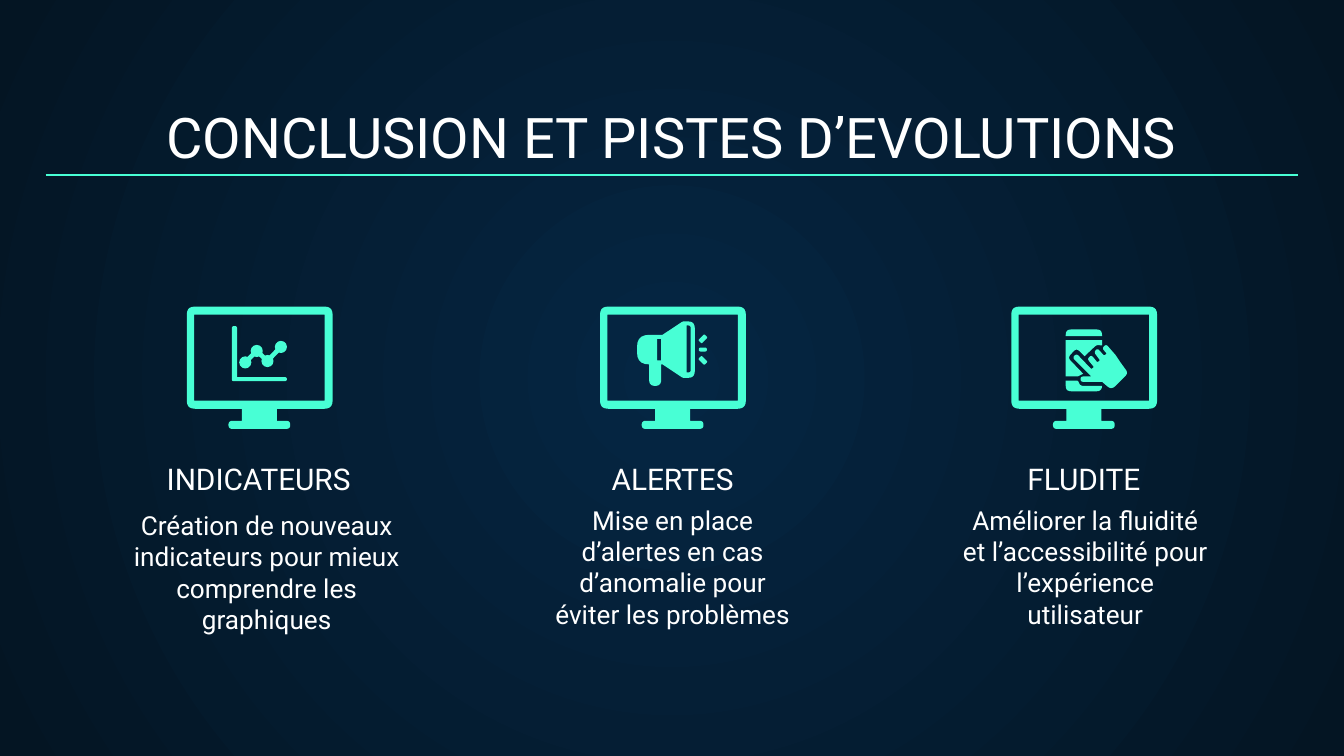
"""Build a dark conclusion slide with three icon columns."""
from lxml.etree import SubElement
from pptx import Presentation
from pptx.dml.color import RGBColor
from pptx.enum.shapes import MSO_CONNECTOR, MSO_SHAPE
from pptx.enum.text import MSO_ANCHOR, PP_ALIGN
from pptx.oxml.ns import qn
from pptx.util import Cm, Pt

rgb = RGBColor.from_string
MINT, WHITE = "48FFD5", "FFFFFF"
UNIT = 0.0254


def write(sp, box, text, size, anchor):
    """Place a shape, given in hundredths of an inch, and fill in its text."""
    sp.left, sp.top, sp.width, sp.height = [Cm(v * UNIT) for v in box]
    tf = sp.text_frame
    tf.word_wrap = True
    tf.vertical_anchor = anchor
    tf.margin_left = tf.margin_right = tf.margin_top = tf.margin_bottom = Cm(0.25)
    p = tf.paragraphs[0]
    p.alignment = PP_ALIGN.CENTER
    r = p.add_run()
    r.text = text
    r.font.name, r.font.size, r.font.bold = "Roboto", Pt(size), False
    r.font.color.rgb = rgb(WHITE)


def outline(contours, dx=0, dy=0):
    """Draw a mint shape from (x, y, corner radius) points; later contours are holes."""
    builder = None
    for corners in contours:
        pts = []
        for i, (x, y, *radius) in enumerate(corners):
            if not radius:
                pts.append((x, y))
                continue
            ends = []
            for nx, ny, *_ in (corners[i - 1], corners[(i + 1) % len(corners)]):
                k = radius[0] / ((nx - x) ** 2 + (ny - y) ** 2) ** 0.5
                ends.append((x + (nx - x) * k, y + (ny - y) * k))
            (ax, ay), (bx, by) = ends
            for t in (0, 0.2, 0.4, 0.6, 0.8, 1):
                a, m, b = (1 - t) ** 2, 2 * t * (1 - t), t ** 2
                pts.append((a * ax + m * x + b * bx, a * ay + m * y + b * by))
        pts = [(Cm((x + dx) * UNIT), Cm((y + dy) * UNIT)) for x, y in pts]
        if builder is None:
            builder = s.shapes.build_freeform(*pts[0])
        else:
            builder.move_to(*pts[0])
        builder.add_line_segments(pts[1:], close=True)
    sp = builder.convert_to_shape()
    sp.shadow.inherit = False
    sp.fill.solid()
    sp.fill.fore_color.rgb = rgb(MINT)
    sp.line.fill.background()
    return sp


prs = Presentation()
prs.slide_width, prs.slide_height = Cm(25.4), Cm(14.28)
s = prs.slides.add_slide(prs.slide_layouts[5])

fill = s.background.fill
fill.gradient()
for stop, color in zip(fill.gradient_stops, ("052643", "041523")):
    stop.color.rgb = rgb(color)
for stop, position in zip(fill.gradient_stops, (0, 1)):
    stop.position = position
grad = s.element.find(".//" + qn("a:gradFill"))
grad.remove(grad.find(qn("a:lin")))
circle = SubElement(grad, qn("a:path"), path="circle")
SubElement(circle, qn("a:fillToRect"), l="50000", t="50000", r="50000", b="50000")

write(s.shapes.title, (34, 70, 932, 66), "CONCLUSION ET PISTES D’EVOLUTIONS", 30, MSO_ANCHOR.BOTTOM)

monitor = [
    [(0, 0, 6), (108.5, 0, 6), (108.5, 76, 6), (67, 76), (67, 85), (77, 85, 3), (77, 91, 3),
     (31, 91, 3), (31, 85, 3), (41, 85), (41, 76), (0, 76, 6)],
    [(5.5, 6), (102.5, 6), (102.5, 70), (5.5, 70)],
]
columns = [
    ("INDICATEURS", 79, "Création de nouveaux indicateurs pour mieux comprendre les graphiques", (85, 369, 227, 66), 139),
    ("ALERTES", 387, "Mise en place d’alertes en cas d’anomalie pour éviter les problèmes", (397, 365, 207, 55), 446.5),
    ("FLUDITE", 693, "Améliorer la fluidité et l’accessibilité pour l’expérience utilisateur", (704, 365, 207, 55), 752.5),
]
for heading, left, body, box, icon_left in columns:
    write(s.shapes.add_textbox(0, 0, 0, 0), box, body, 14, MSO_ANCHOR.TOP)
    write(s.shapes.add_textbox(0, 0, 0, 0), (left, 358, 227, 21), heading, 16, MSO_ANCHOR.BOTTOM)
    outline(monitor, icon_left, 228)

axes = outline([[(173, 243, 1.4), (176, 243, 1.4), (176, 281), (213, 281, 1), (213, 283, 1), (173, 283, 1)]])
axes.line.color.rgb = rgb(MINT)
axes.line.width = Pt(0.75)

dots = [(182.5, 269.5), (191, 261), (199, 268.5), (209, 258)]
lines = [((34, 130), (966, 130), 0.75)]
lines += [(a, b, 2.5) for a, b in zip(dots, dots[1:])]
for start, end, width in lines:
    ends = [Cm(v * UNIT) for v in start + end]
    line = s.shapes.add_connector(MSO_CONNECTOR.STRAIGHT, *ends)
    line.line.color.rgb = rgb(MINT)
    line.line.width = Pt(width)
    SubElement(line.element.spPr, qn("a:effectLst"))
for x, y in dots:
    dot = s.shapes.add_shape(MSO_SHAPE.OVAL, *[Cm(v * UNIT) for v in (x - 4, y - 4, 8, 8)])
    dot.shadow.inherit = False
    dot.fill.solid()
    dot.fill.fore_color.rgb = rgb(MINT)
    dot.line.color.rgb = rgb(MINT)
    dot.line.width = Pt(0.75)

megaphone = [
    [(474, 249, 9), (493, 249), (508, 239, 1), (517, 239, 5), (517, 281, 5), (508, 281, 1), (493, 271),
     (492, 271), (492, 287, 4.5), (483, 287, 4.5), (483, 271), (474, 271, 9)],
    [(489, 252), (492, 252), (492, 268), (489, 268)],
    [(511, 242), (514, 242, 2), (514, 277, 2), (511, 277)],
]
ray = [(524, 248.5, 1), (526.5, 251, 1), (522, 255.5, 1), (519.5, 253, 1)]
outline(megaphone)
outline([ray])
outline([[(520, 258.5, 1.5), (526, 258.5, 1.5), (526, 261.5, 1.5), (520, 261.5, 1.5)]])
outline([[(x, 520 - y, radius) for x, y, radius in ray]])

phone_top = [(793, 245, 4), (820, 245, 4), (820, 250), (793, 250)]
phone_screen = [(793, 253), (820, 253), (820, 257), (816, 256.5, 2), (807, 265), (801, 259, 3),
                (794.5, 266, 3), (806, 278), (802, 280), (793, 280)]
phone_base = [(793, 283), (802, 283, 1), (804, 287, 2), (820, 287), (820, 291, 4), (793, 291, 4)]
hand = [(823, 256, 2), (838, 271), (836, 273), (839.5, 277.5, 3), (827, 290, 4), (820, 284),
        (804, 284, 2), (804, 280, 2), (812, 280), (798, 266, 2), (801, 263, 2), (812, 274.5, 1),
        (814, 273, 1), (809, 267, 2), (812, 264, 2), (816.5, 269.5, 1), (818.5, 268, 1),
        (814, 262, 2), (816.5, 259, 2), (821.5, 264.5, 1), (823.5, 263, 1), (820, 259, 2)]
hand[1:3] = [(830, 264), (834, 270)]
for part in (phone_top, phone_screen, phone_base, hand):
    outline([part])

prs.save("out.pptx")
